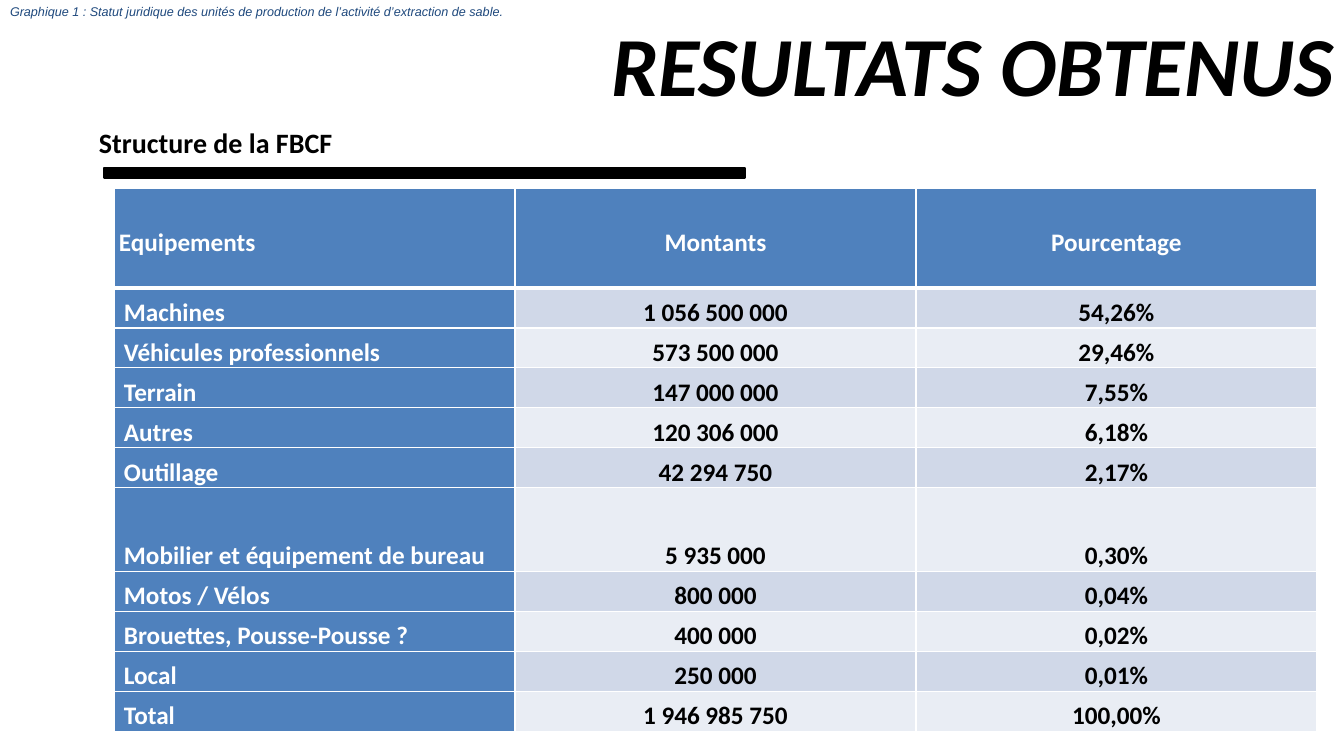
"""Builds the slide showing the structure of the FBCF by equipment."""
from dataclasses import dataclass

from lxml.etree import fromstring
from pptx import Presentation
from pptx.dml.color import RGBColor
from pptx.enum.shapes import MSO_SHAPE
from pptx.enum.text import MSO_ANCHOR, MSO_AUTO_SIZE, PP_ALIGN
from pptx.util import Emu, Pt

TITLE = "RESULTATS OBTENUS"
SUBTITLE = "Structure de la FBCF"
CAPTION = "Graphique 1 : Statut juridique des unités de production de l’activité d’extraction de sable."
ROWS = [
    ("Equipements", "Montants", "Pourcentage"),
    ("Machines", "1 056 500 000", "54,26%"),
    ("Véhicules professionnels", "573 500 000", "29,46%"),
    ("Terrain", "147 000 000", "7,55%"),
    ("Autres", "120 306 000", "6,18%"),
    ("Outillage", "42 294 750", "2,17%"),
    ("Mobilier et équipement de bureau", "5 935 000", "0,30%"),
    ("Motos / Vélos", "800 000", "0,04%"),
    ("Brouettes, Pousse-Pousse ?", "400 000", "0,02%"),
    ("Local", "250 000", "0,01%"),
    ("Total", "1 946 985 750", "100,00%"),
]
ROW_HEIGHT = 40
SPECIAL_HEIGHTS = {0: 100, 6: 84}
COLUMN_WIDTH = 401


@dataclass(frozen=True)
class Theme:
    """Colours, fonts and type sizes of the slide."""
    black: str = "000000"
    white: str = "FFFFFF"
    navy: str = "1F497D"
    blue: str = "4F81BD"
    bands: tuple = ("E9EDF4", "D0D8E8")
    main_font: str = "Calibri"
    caption_font: str = "Arial"
    title_size: int = 60
    subtitle_size: int = 20
    table_size: int = 18
    caption_size: int = 9


THEME = Theme()
DRAWING = "http://schemas.openxmlformats.org/drawingml/2006/main"


def px(length):
    return Emu(round(length * 914400 / 100.8))


def place(shape, left, top, width, height):
    shape.left, shape.top = px(left), px(top)
    shape.width, shape.height = px(width), px(height)


def write(frame, text, size, color, name=THEME.main_font, bold=True, italic=False,
          align=PP_ALIGN.LEFT):
    paragraph = frame.paragraphs[0]
    paragraph.text = text
    paragraph.alignment = align
    font = paragraph.font
    font.name, font.size = name, Pt(size)
    font.bold, font.italic = bold, italic
    font.color.rgb = RGBColor.from_string(color)
    return paragraph


def add_text(slide, box, inset, anchor, wrap, *text, **style):
    shape = slide.shapes.add_textbox(0, 0, 0, 0)
    place(shape, *box)
    frame = shape.text_frame
    frame.word_wrap = wrap
    frame.vertical_anchor = anchor
    frame.margin_left = frame.margin_right = px(inset[0])
    frame.margin_top = frame.margin_bottom = px(inset[1])
    write(frame, *text, **style)


def add_borders(cell, row):
    widths = {"L": 1, "R": 1, "T": 3 if row == 1 else 1, "B": 3 if row == 0 else 1}
    properties = cell._tc.get_or_add_tcPr()
    for position, (side, width) in enumerate(widths.items()):
        properties.insert(position, fromstring(
            f'<a:ln{side} xmlns:a="{DRAWING}" w="{Pt(width)}"><a:solidFill>'
            f'<a:srgbClr val="{THEME.white}"/></a:solidFill></a:ln{side}>'))


def fill_cell(cell, row, column, text):
    heading = row == 0 or column == 0
    cell.fill.solid()
    cell.fill.fore_color.rgb = RGBColor.from_string(THEME.blue if heading else THEME.bands[row % 2])
    cell.vertical_anchor = MSO_ANCHOR.MIDDLE if row == 0 else MSO_ANCHOR.BOTTOM
    cell.margin_left = px(10 if row and column == 0 else 5)
    cell.margin_right = px(5)
    cell.margin_top = cell.margin_bottom = 0
    paragraph = write(cell.text_frame, text, THEME.table_size,
                      THEME.white if heading else THEME.black,
                      align=PP_ALIGN.CENTER if column else PP_ALIGN.LEFT)
    paragraph.line_spacing = 1.3
    paragraph.space_after = Pt(10)
    add_borders(cell, row)


def add_equipment_table(slide):
    heights = [SPECIAL_HEIGHTS.get(row, ROW_HEIGHT) for row in range(len(ROWS))]
    columns = len(ROWS[0])
    table = slide.shapes.add_table(len(ROWS), columns, px(114), px(188),
                                   px(COLUMN_WIDTH * columns), px(sum(heights))).table
    for column in table.columns:
        column.width = px(COLUMN_WIDTH)
    for row, (height, texts) in enumerate(zip(heights, ROWS)):
        table.rows[row].height = px(height)
        for column, text in enumerate(texts):
            fill_cell(table.cell(row, column), row, column, text)


def main():
    presentation = Presentation()
    presentation.slide_width, presentation.slide_height = px(1344), px(756)
    slide = presentation.slides.add_slide(presentation.slide_layouts[5])

    title = slide.shapes.title
    place(title, 81, 20, 1263, 86)
    title.text_frame.auto_size = MSO_AUTO_SIZE.NONE
    title.text_frame.vertical_anchor = MSO_ANCHOR.MIDDLE
    write(title.text_frame, TITLE, THEME.title_size, THEME.black,
          italic=True, align=PP_ALIGN.RIGHT)

    add_text(slide, (99, 125, 873, 34), (0, 0), MSO_ANCHOR.MIDDLE, True,
             SUBTITLE, THEME.subtitle_size, THEME.black)

    bar = slide.shapes.add_shape(MSO_SHAPE.RECTANGLE, px(104), px(168), px(641), px(10))
    bar.shadow.inherit = False
    bar.fill.solid()
    bar.fill.fore_color.rgb = bar.line.color.rgb = RGBColor.from_string(THEME.black)
    bar.line.width = Pt(2)

    add_text(slide, (0, 0, 1344, 50), (10, 4), MSO_ANCHOR.TOP, True,
             CAPTION, THEME.caption_size, THEME.navy,
             name=THEME.caption_font, bold=False, italic=True)
    add_equipment_table(slide)
    presentation.save("out.pptx")


if __name__ == "__main__":
    main()
